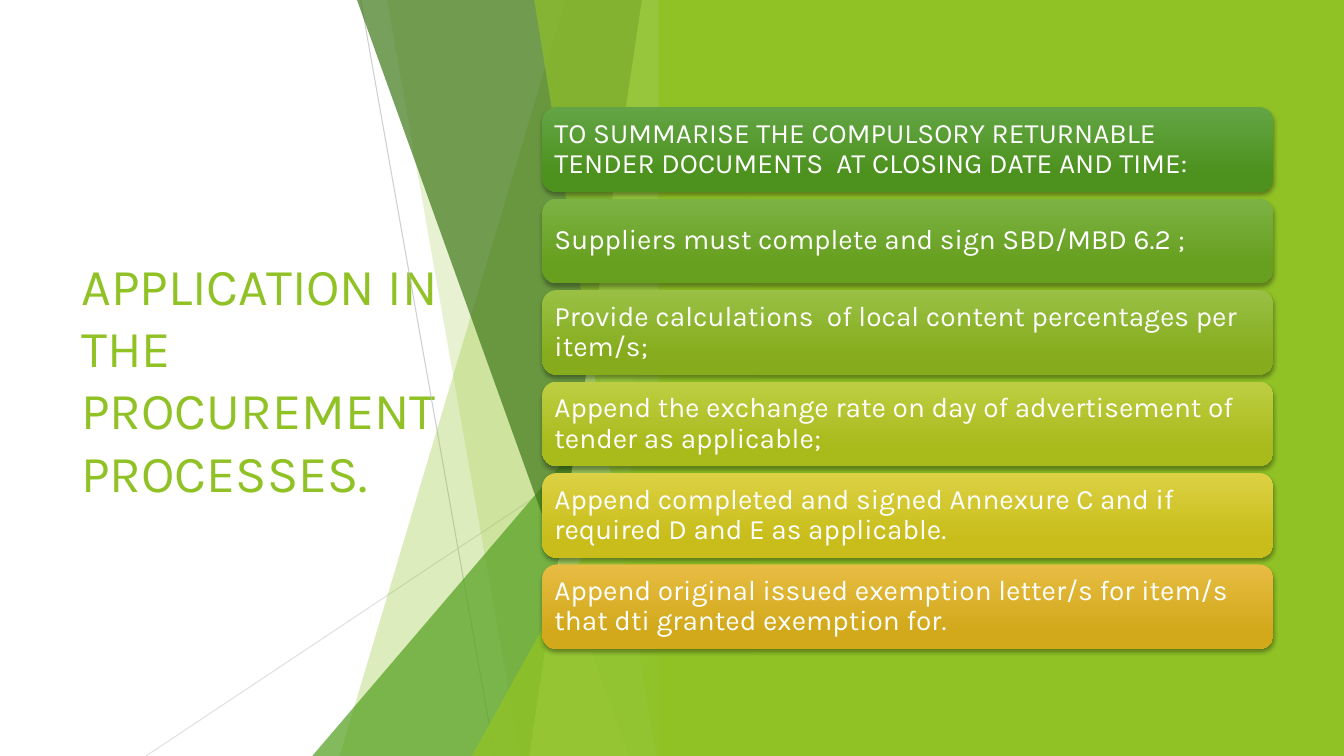
from lxml import etree
from pptx import Presentation
from pptx.dml.color import RGBColor
from pptx.enum.shapes import MSO_CONNECTOR, MSO_SHAPE
from pptx.enum.text import MSO_ANCHOR, PP_ALIGN
from pptx.oxml.ns import qn
from pptx.util import Cm, Pt

STRAIGHT = MSO_CONNECTOR.STRAIGHT
RECTANGLE = MSO_SHAPE.RECTANGLE
ROUNDED = MSO_SHAPE.ROUNDED_RECTANGLE
TRIANGLE = MSO_SHAPE.ISOSCELES_TRIANGLE
MIDDLE = MSO_ANCHOR.MIDDLE
LEFT = PP_ALIGN.LEFT

FONT = "Karla"
WIDTH, HEIGHT = 33.87, 19.05
FACET_RIGHT = 16.92
COLORS = {
    "lime": "90C226", "green": "54A021", "forest": "3F7819", "pale": "C0E474",
    "gray": "BFBFBF", "silver": "D9D9D9", "white": "FFFFFF", "black": "000000",
}

# Card text with its upper and lower gradient colours
CARDS = [
    ("TO SUMMARISE THE COMPULSORY RETURNABLE TENDER DOCUMENTS  AT CLOSING DATE AND TIME:",
     "63A545", "4D921E"),
    ("Suppliers must complete and sign SBD/MBD 6.2 ;", "7BB244", "679F1E"),
    ("Provide calculations  of local content percentages per item/s;", "99C044", "86AC1D"),
    ("Append the exchange rate on day of advertisement of tender as applicable;",
     "BDCE43", "A9BA1B"),
    ("Append completed and signed Annexure C and if required D and E as applicable.",
     "DCD143", "C8BD1A"),
    ("Append original issued exemption letter/s for item/s that dti granted exemption for.",
     "E7BC43", "D2A91B"),
]


def rgb(name):
    return RGBColor.from_string(COLORS[name])


def set_alpha(element, percent):
    color = element.find(".//" + qn("a:srgbClr"))
    etree.SubElement(color, qn("a:alpha"), val=str(percent * 1000))


def paint(shape, color, opacity=100):
    shape.shadow.inherit = False
    shape.line.fill.background()
    shape.fill.solid()
    shape.fill.fore_color.rgb = rgb(color)
    if opacity < 100:
        set_alpha(shape._element.spPr, opacity)


def add_ray(slide, start, end, color, opacity):
    ray = slide.shapes.add_connector(STRAIGHT, *(Cm(value) for value in start + end))
    ray.line.color.rgb = rgb(color)
    ray.line.width = Pt(0.75)
    set_alpha(ray._element.spPr, opacity)
    etree.SubElement(ray._element.spPr, qn("a:effectLst"))


def add_facet(slide, top_left, bottom_left, color, opacity):
    """Full-height facet with a slanted left edge."""
    top = Cm(-0.02)
    builder = slide.shapes.build_freeform(Cm(top_left), top)
    builder.add_line_segments([
        (Cm(FACET_RIGHT), top), (Cm(FACET_RIGHT), Cm(HEIGHT)), (Cm(bottom_left), Cm(HEIGHT)),
    ])
    paint(builder.convert_to_shape(), color, opacity)


def add_corner(slide, left, top, color, opacity):
    """Right triangle standing on the lower slide edge."""
    corner = slide.shapes.add_shape(
        TRIANGLE, Cm(left), Cm(top), Cm(FACET_RIGHT - left), Cm(HEIGHT - top))
    corner.adjustments[0] = 1
    paint(corner, color, opacity)


def write(shape, text, size, color, line_spacing):
    frame = shape.text_frame
    frame.word_wrap = True
    frame.vertical_anchor = MIDDLE
    paragraph = frame.paragraphs[0]
    paragraph.alignment = LEFT
    paragraph.line_spacing = line_spacing
    run = paragraph.add_run()
    run.text = text
    run.font.name = FONT
    run.font.size = Pt(size)
    run.font.color.rgb = rgb(color)


def add_shadow(shape):
    shape.shadow.inherit = False
    effects = shape._element.spPr.find(qn("a:effectLst"))
    shadow = etree.SubElement(
        effects, qn("a:outerShdw"), blurRad=str(Pt(3)), dist=str(Pt(2)),
        dir="5400000", algn="ctr", rotWithShape="0")
    etree.SubElement(shadow, qn("a:srgbClr"), val=COLORS["black"])
    set_alpha(shadow, 35)


def add_card(slide, top, text, upper, lower):
    card = slide.shapes.add_shape(ROUNDED, Cm(13.67), Cm(top), Cm(18.42), Cm(2.13))
    card.line.fill.background()
    card.fill.gradient()
    card.fill.gradient_angle = 270
    for stop, position, color in zip(card.fill.gradient_stops, (0, 0.78), (upper, lower)):
        stop.position = position
        stop.color.rgb = RGBColor.from_string(color)
    add_shadow(card)
    frame = card.text_frame
    frame.margin_left = frame.margin_right = Cm(0.2)
    frame.margin_top = frame.margin_bottom = Cm(0.2)
    write(card, text, 20, "white", 0.9)


def main():
    presentation = Presentation()
    presentation.slide_width, presentation.slide_height = Cm(WIDTH), Cm(HEIGHT)
    slide = presentation.slides.add_slide(presentation.slide_layouts[6])

    # Title
    title = slide.shapes.add_textbox(Cm(1.8), Cm(3.84), Cm(9.86), Cm(11.38))
    write(title, "APPLICATION IN THE PROCUREMENT PROCESSES.", 37, "lime", 1.0)

    # Faceted divider
    add_ray(slide, (9.09, 0), (12.47, HEIGHT), "gray", 75)
    add_ray(slide, (FACET_RIGHT, 10.24), (3.68, HEIGHT), "silver", 80)
    add_facet(slide, 14.25, 8.56, "lime", 30)
    add_facet(slide, 9.75, 13.11, "lime", 20)
    add_corner(slide, 7.87, 8.46, "green", 72)
    add_facet(slide, 8.99, 15.85, "forest", 70)
    add_facet(slide, 16.18, 13.34, "pale", 70)
    add_facet(slide, 13.46, 16.54, "lime", 65)
    add_corner(slide, 11.89, 9.98, "lime", 80)

    # Right panel
    panel = slide.shapes.add_shape(RECTANGLE, Cm(16.6), 0, Cm(WIDTH - 16.6), Cm(HEIGHT))
    paint(panel, "lime")

    # Document cards
    for index, (text, upper, lower) in enumerate(CARDS):
        add_card(slide, 2.7 + index * 2.305, text, upper, lower)

    presentation.save("out.pptx")


if __name__ == "__main__":
    main()
